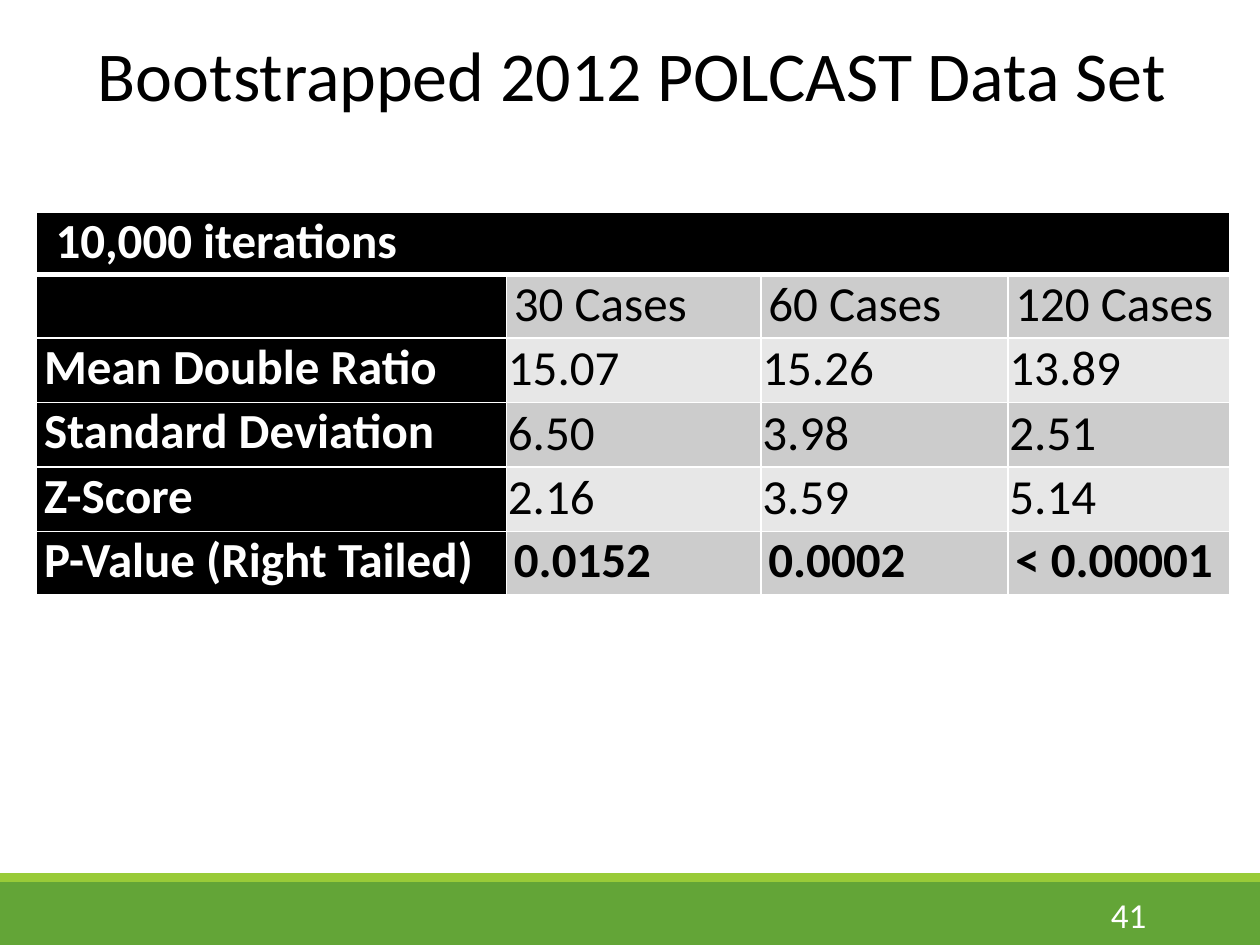
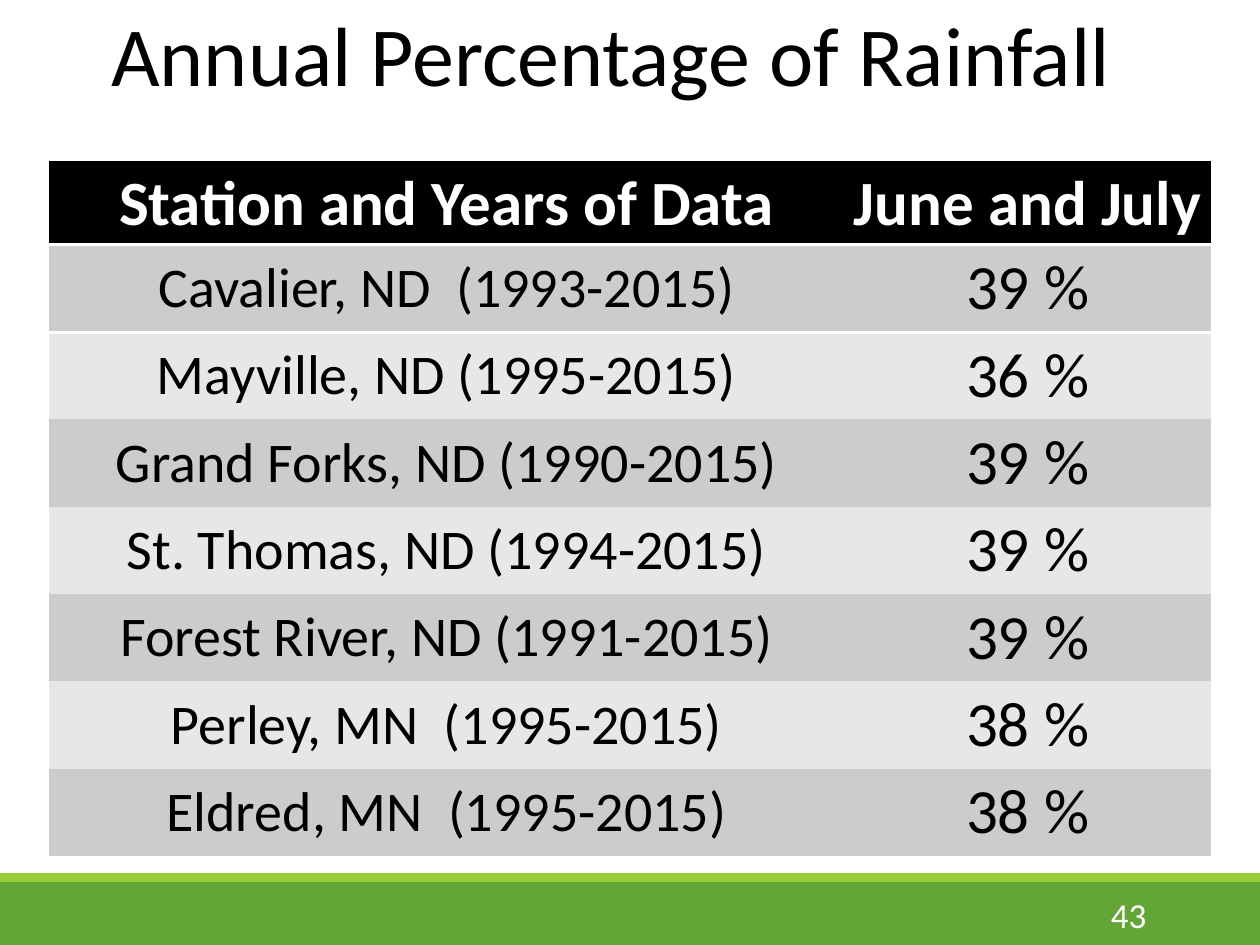
from lxml import etree
from pptx import Presentation
from pptx.dml.color import RGBColor
from pptx.enum.shapes import MSO_SHAPE
from pptx.enum.text import MSO_ANCHOR, MSO_AUTO_SIZE, PP_ALIGN
from pptx.oxml.ns import qn
from pptx.util import Cm, Pt

RECTANGLE = MSO_SHAPE.RECTANGLE
TOP, MIDDLE = MSO_ANCHOR.TOP, MSO_ANCHOR.MIDDLE
LEFT, CENTER, RIGHT = PP_ALIGN.LEFT, PP_ALIGN.CENTER, PP_ALIGN.RIGHT
FIT_SHAPE = MSO_AUTO_SIZE.SHAPE_TO_FIT_TEXT

FONT = "Calibri"
COLORS = {
    "text": "000000",
    "heading": "000000",
    "inverse": "FFFFFF",
    "odd_row": "CCCCCC",
    "even_row": "E7E7E7",
    "footer": "63A537",
    "footer_edge": "99CB38",
}
PLAIN_TABLE_STYLE = "{2D5ABB26-0587-4C30-8999-92F81FD0307C}"
SLIDE_WIDTH, SLIDE_HEIGHT = 25.4, 19.05
FOOTER_TOP, FOOTER_EDGE = 17.78, 0.18

WIDE_INSETS = (0.15, 0, 0.15, 0)
TIGHT_INSETS = (0.03, 0.03, 0.03, 0)
RAINFALL_INSETS = (0.18, 0.08, 0.18, 0.08)

BOOTSTRAP_ROWS = [
    ("", "30 Cases", "60 Cases", "120 Cases"),
    ("Mean Double Ratio", "15.07", "15.26", "13.89"),
    ("Standard Deviation", "6.50", "3.98", "2.51"),
    ("Z-Score", "2.16", "3.59", "5.14"),
    ("P-Value (Right Tailed)", "0.0152", "0.0002", "< 0.00001"),
]
RAINFALL_ROWS = [
    ("Cavalier, ND  (1993-2015)", "39 %"),
    ("Mayville, ND (1995-2015)", "36 %"),
    ("Grand Forks, ND (1990-2015)", "39 %"),
    ("St. Thomas, ND (1994-2015)", "39 %"),
    ("Forest River, ND (1991-2015)", "39 %"),
    ("Perley, MN  (1995-2015)", "38 %"),
    ("Eldred, MN  (1995-2015)", "38 %"),
]


def rgb(name):
    return RGBColor.from_string(COLORS[name])


def set_insets(holder, insets):
    (holder.margin_left, holder.margin_top,
     holder.margin_right, holder.margin_bottom) = map(Cm, insets)


def write(frame, text, size, color, align=LEFT, bold=False):
    paragraph = frame.paragraphs[0]
    paragraph.text = text
    paragraph.alignment = align
    font = paragraph.font
    font.name, font.size, font.bold = FONT, Pt(size), bold
    font.color.rgb = rgb(color)


def add_title(slide, text, box, size, insets):
    title = slide.shapes.title
    title.left, title.top, title.width, title.height = map(Cm, box)
    frame = title.text_frame
    frame.word_wrap = True
    frame.auto_size = FIT_SHAPE
    frame.vertical_anchor = TOP
    set_insets(frame, insets)
    write(frame, text, size, "text", CENTER)


def add_footer(slide, number):
    bands = [
        (FOOTER_TOP, SLIDE_HEIGHT - FOOTER_TOP, "footer"),
        (FOOTER_TOP - FOOTER_EDGE, FOOTER_EDGE, "footer_edge"),
    ]
    for top, height, color in bands:
        band = slide.shapes.add_shape(
            RECTANGLE, 0, Cm(top), Cm(SLIDE_WIDTH), Cm(height))
        band.shadow.inherit = False
        band.fill.solid()
        band.fill.fore_color.rgb = rgb(color)
        band.line.fill.background()
    page = slide.shapes.add_textbox(
        Cm(20.62), Cm(FOOTER_TOP + 0.15), Cm(2.74), Cm(1.02)).text_frame
    page.word_wrap = True
    page.vertical_anchor = MIDDLE
    write(page, str(number), 20, "inverse", RIGHT)


def add_plain_table(slide, left, top, widths, heights):
    frame = slide.shapes.add_table(
        len(heights), len(widths), Cm(left), Cm(top),
        Cm(sum(widths)), Cm(sum(heights)))
    table = frame.table
    table._tbl.tblPr.find(qn("a:tableStyleId")).text = PLAIN_TABLE_STYLE
    for column, width in zip(table.columns, widths):
        column.width = Cm(width)
    for row, height in zip(table.rows, heights):
        row.height = Cm(height)
    return table


def style_cell(cell, fill, insets, anchor, borders):
    properties = cell._tc.get_or_add_tcPr()
    for side in "LRTB":
        if borders.get(side):
            line = etree.SubElement(
                properties, qn(f"a:ln{side}"), w=str(Pt(borders[side])))
            paint = etree.SubElement(line, qn("a:solidFill"))
            etree.SubElement(paint, qn("a:srgbClr"), val=COLORS["inverse"])
    cell.fill.solid()
    cell.fill.fore_color.rgb = rgb(fill)
    cell.vertical_anchor = anchor
    set_insets(cell, insets)


def row_borders(row, grid, header_rule):
    return {
        "L": grid,
        "R": grid,
        "T": header_rule if row == 1 else grid,
        "B": header_rule if row == 0 else grid,
    }


def stripe(row):
    return "odd_row" if row % 2 else "even_row"


def add_bootstrap_table(slide, left, top):
    heights = [1.27, 1.27, 1.3, 1.3, 1.3, 1.27]
    table = add_plain_table(slide, left, top, [9.47, 5.13, 4.98, 4.47], heights)
    for column in range(4):
        style_cell(table.cell(0, column), "heading", (0.38, 0, 0.15, 0), TOP,
                   row_borders(0, 1, 3))
    iterations = table.cell(0, 0)
    iterations.merge(table.cell(0, 3))
    write(iterations.text_frame, "10,000 iterations", 28, "inverse", bold=True)

    last = len(BOOTSTRAP_ROWS)
    for row, values in enumerate(BOOTSTRAP_ROWS, 1):
        for column, value in enumerate(values):
            is_label = column == 0
            is_wide = is_label or row in (1, last)
            cell = table.cell(row, column)
            style_cell(cell, "heading" if is_label else stripe(row),
                       WIDE_INSETS if is_wide else TIGHT_INSETS, TOP,
                       row_borders(row, 1, 3))
            write(cell.text_frame, value, 28, "inverse" if is_label else "text",
                  bold=is_label or row == last)


def add_rainfall_table(slide, left, top):
    heights = [1.63] + [1.76] * len(RAINFALL_ROWS)
    table = add_plain_table(slide, left, top, [16.03, 7.39], heights)
    rows = [("Station and Years of Data", "June and July")] + RAINFALL_ROWS
    for row, values in enumerate(rows):
        is_header = row == 0
        for column, value in enumerate(values):
            cell = table.cell(row, column)
            style_cell(cell, "heading" if is_header else stripe(row),
                       RAINFALL_INSETS, TOP if is_header else MIDDLE,
                       row_borders(row, 0, 2))
            write(cell.text_frame, value, 36 if is_header or column else 32,
                  "inverse" if is_header else "text", CENTER, is_header)


def build_bootstrap_slide(slide):
    add_footer(slide, 41)
    add_title(slide, "Bootstrapped 2012 POLCAST Data Set",
              (0.33, 0.51, 24.82, 1.96), 40, (0.25, 0.13, 0.25, 0.13))
    add_bootstrap_table(slide, 0.74, 4.27)


def build_rainfall_slide(slide):
    add_footer(slide, 43)
    add_title(slide, "Annual Percentage of Rainfall",
              (0, -0.03, SLIDE_WIDTH, 2.24), 48, (0.18, 0.08, 0.95, 0.08))
    add_rainfall_table(slide, 0.99, 3.25)


def main():
    deck = Presentation()
    deck.slide_width, deck.slide_height = Cm(SLIDE_WIDTH), Cm(SLIDE_HEIGHT)
    title_only = deck.slide_layouts[5]
    for build in (build_bootstrap_slide, build_rainfall_slide):
        build(deck.slides.add_slide(title_only))
    deck.save("out.pptx")


if __name__ == "__main__":
    main()
